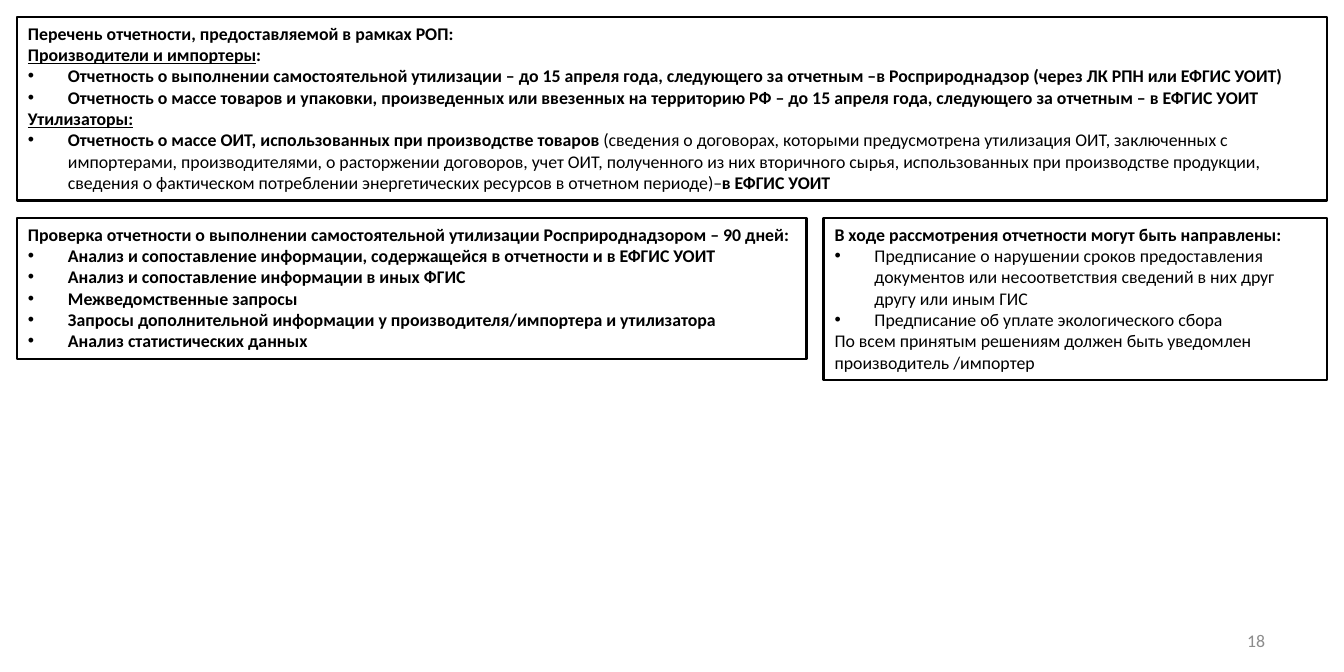
from dataclasses import dataclass

from lxml import etree
from pptx import Presentation
from pptx import util as u
from pptx.dml.color import RGBColor
from pptx.enum import text as t
from pptx.oxml.ns import qn


@dataclass(frozen=True)
class Theme:
    font: str = "Calibri"
    bullet_font: str = "Arial"
    size: float = 6
    ink: str = "000000"
    muted: str = "8C8C8C"
    line: float = 0.75
    inset_x: float = 3.75
    inset_y: float = 1.85
    indent: float = 13.5


def write(paragraph, text, *, theme, color=None, bold=False, underline=False):
    run = paragraph.add_run()
    run.text = text
    font = run.font
    font.name, font.size = theme.font, u.Pt(theme.size)
    font.bold, font.underline = bold, underline
    font.color.rgb = RGBColor.from_string(color or theme.ink)


class SlideBuilder:
    def __init__(self, slide, theme):
        self.slide, self.theme = slide, theme

    def frame(self, shape, anchor):
        frame, theme = shape.text_frame, self.theme
        frame.word_wrap = True
        frame.auto_size = t.MSO_AUTO_SIZE.NONE
        frame.vertical_anchor = anchor
        frame.margin_left = frame.margin_right = u.Pt(theme.inset_x)
        frame.margin_top = frame.margin_bottom = u.Pt(theme.inset_y)
        return frame

    def place(self, shape, left, top, width, height):
        shape.left, shape.top = u.Pt(left), u.Pt(top)
        shape.width, shape.height = u.Pt(width), u.Pt(height)

    def paragraph(self, paragraph, bulleted, runs):
        paragraph.alignment = t.PP_ALIGN.LEFT
        paragraph.line_spacing = 1.0
        paragraph.space_before = paragraph.space_after = u.Pt(0)
        indent = u.Pt(self.theme.indent if bulleted else 0)
        props = paragraph._p.get_or_add_pPr()
        props.set("marL", str(indent))
        props.set("indent", str(-indent))
        if bulleted:
            etree.SubElement(props, qn("a:buFont"), typeface=self.theme.bullet_font)
            etree.SubElement(props, qn("a:buChar"), char="•")
        else:
            etree.SubElement(props, qn("a:buNone"))
        for text, style in runs:
            write(paragraph, text, theme=self.theme, **style)

    def framed_list(self, index, bounds, content):
        body = self.slide.placeholders[index]
        self.place(body, *bounds)
        body.fill.background()
        body.line.color.rgb = RGBColor.from_string(self.theme.ink)
        body.line.width = u.Pt(self.theme.line)
        frame = self.frame(body, t.MSO_ANCHOR.TOP)
        for number, (bulleted, runs) in enumerate(content):
            paragraph = frame.add_paragraph() if number else frame.paragraphs[0]
            self.paragraph(paragraph, bulleted, runs)

    def page_number(self, number, bounds):
        box = self.slide.shapes.add_textbox(*map(u.Pt, bounds))
        paragraph = self.frame(box, t.MSO_ANCHOR.MIDDLE).paragraphs[0]
        paragraph.alignment = t.PP_ALIGN.RIGHT
        write(paragraph, number, theme=self.theme, color=self.theme.muted)

    def remove_empty(self):
        for holder in list(self.slide.placeholders):
            if not holder.text_frame.text:
                holder.element.getparent().remove(holder.element)


# Content: each paragraph is (bulleted, runs)
PLAIN, BOLD = {}, {"bold": True}
UNDERLINED = {"bold": True, "underline": True}


def line(text, style=PLAIN):
    return False, [(text, style)]


def item(text, style=PLAIN):
    return True, [(text, style)]


REPORTS = [
    line("Перечень отчетности, предоставляемой в рамках РОП:", BOLD),
    (False, [("Производители и импортеры", UNDERLINED), (":", BOLD)]),
    item("Отчетность о выполнении самостоятельной утилизации – до 15 апреля года, "
         "следующего за отчетным –в Росприроднадзор (через ЛК РПН или ЕФГИС УОИТ)", BOLD),
    item("Отчетность о массе товаров и упаковки, произведенных или ввезенных на "
         "территорию РФ – до 15 апреля года, следующего за отчетным – в ЕФГИС УОИТ", BOLD),
    line("Утилизаторы:", UNDERLINED),
    (True, [
        ("Отчетность о массе ОИТ, использованных при производстве товаров ", BOLD),
        ("(сведения о договорах, которыми предусмотрена утилизация ОИТ, заключенных с "
         "импортерами, производителями, о расторжении договоров, учет ОИТ, полученного "
         "из них вторичного сырья, использованных при производстве продукции, сведения "
         "о фактическом потреблении энергетических ресурсов в отчетном периоде)–", PLAIN),
        ("в ЕФГИС УОИТ", BOLD),
    ]),
]
CHECKS = [
    line("Проверка отчетности о выполнении самостоятельной утилизации "
         "Росприроднадзором – 90 дней:", BOLD),
    item("Анализ и сопоставление информации, содержащейся в отчетности и в ЕФГИС УОИТ", BOLD),
    item("Анализ и сопоставление информации в иных ФГИС", BOLD),
    item("Межведомственные запросы", BOLD),
    item("Запросы дополнительной информации у производителя/импортера и утилизатора", BOLD),
    item("Анализ статистических данных", BOLD),
]
DECISIONS = [
    line("В ходе рассмотрения отчетности могут быть направлены:", BOLD),
    item("Предписание о нарушении сроков предоставления документов или "
         "несоответствия сведений в них друг другу или иным ГИС"),
    item("Предписание об уплате экологического сбора"),
    line("По всем принятым решениям должен быть уведомлен"),
    line("производитель /импортер"),
]


def main():
    deck = Presentation()
    deck.slide_width, deck.slide_height = u.Pt(453.6), u.Pt(226.8)
    comparison = deck.slide_layouts[4]
    builder = SlideBuilder(deck.slides.add_slide(comparison), Theme())

    # Layout: one full-width box above two columns
    margin, gap = 5.7, 5.7
    full_width = 453.6 - 2 * margin
    checks_width = 266.5
    decisions_left = margin + checks_width + gap
    decisions_width = full_width - checks_width - gap
    lower_top = 73.6

    # Boxes
    builder.framed_list(1, (margin, margin, full_width, 62), REPORTS)
    builder.framed_list(2, (margin, lower_top, checks_width, 47.5), CHECKS)
    builder.framed_list(4, (decisions_left, lower_top, decisions_width, 54.7), DECISIONS)

    # Footer
    builder.page_number("18", (325, 210.2, 105.8, 12.2))
    builder.remove_empty()
    deck.save("out.pptx")


if __name__ == "__main__":
    main()
